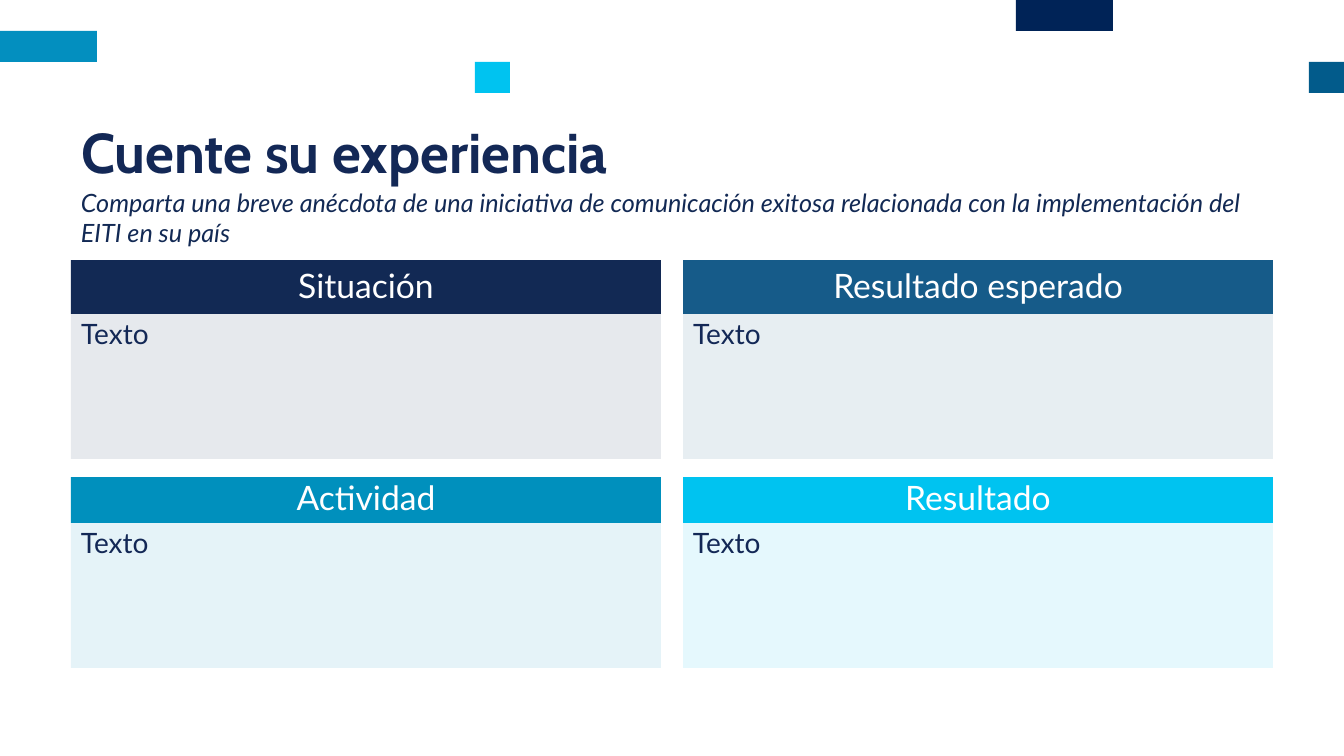
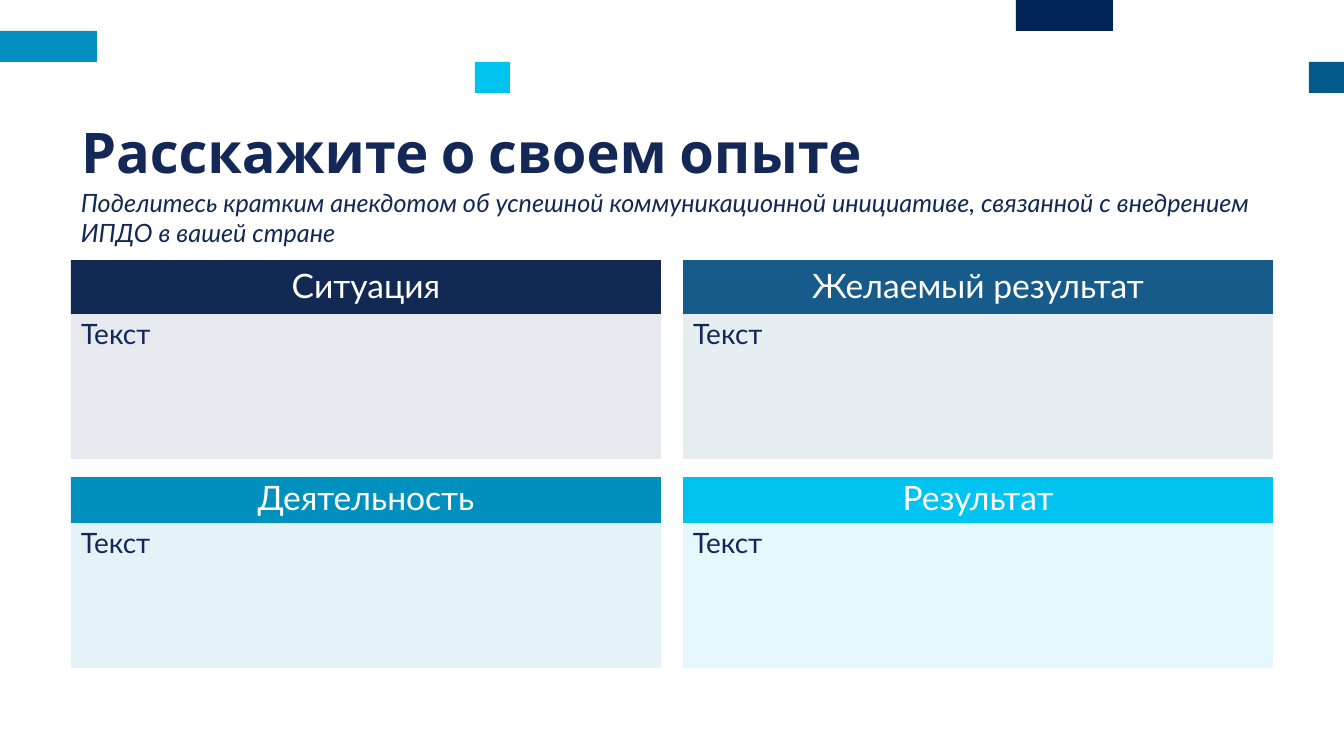
from lxml import etree
from pptx import Presentation, util as u
from pptx.dml.color import RGBColor
from pptx.enum import shapes, text
from pptx.oxml.ns import qn

COLORS = {
    "title": "132856", "note": "122954", "white": "FFFFFF",
    "band_navy": "002357", "band_blue": "025B8B", "band_teal": "038FBF", "band_cyan": "00C3F0",
    "situation": "122954", "expected": "165B89", "activity": "0090BD", "result": "00C3F0",
}
BANDS = [
    ("band_navy", 1016, 0, 97), ("band_blue", 1309, 62, 35),
    ("band_teal", 0, 31, 97), ("band_cyan", 475, 62, 35),
]
BAND_HEIGHT = 31
LEFT, WIDTH = 71, 1202
CARD_WIDTH, CARD_STEP, BODY_HEIGHT = 590, 612, 145
CARD_ROWS = [(260, 54, 0.94), (477, 46, 0.84)]
CARD_COLORS = ["situation", "expected", "activity", "result"]
EXPERIENCES = [
    ("Cuente su experiencia",
     "Comparta una breve anécdota de una iniciativa de comunicación exitosa "
     "relacionada con la implementación del EITI en su país",
     ["Situación", "Resultado esperado", "Actividad", "Resultado"], "Texto"),
    ("Расскажите о своем опыте",
     "Поделитесь кратким анекдотом об успешной коммуникационной инициативе, "
     "связанной с внедрением ИПДО в вашей стране",
     ["Ситуация", "Желаемый результат", "Деятельность", "Результат"], "Текст"),
]


def px(length):
    """Turn whole pixels into EMU."""
    return u.Emu(round(length * 12192000 / 1344))


class Deck:
    """Hold the presentation, its style and the current slide."""

    def __init__(self):
        """Set the slide size and choose the layout with two headed columns."""
        self.prs = Presentation()
        self.prs.slide_width, self.prs.slide_height = px(1344), px(756)
        self.layout = self.prs.slide_layouts.get_by_name("Comparison")
        self.slide = None
        self.free = []

    def new_slide(self):
        """Start a slide; the first one also gives the layout its bands."""
        self.slide = self.prs.slides.add_slide(self.layout)
        self.free = [p for p in self.slide.placeholders if p.placeholder_format.idx]
        if len(self.prs.slides) == 1:
            self.bands()

    def bands(self):
        """Place the coloured bands on the shared layout."""
        for number, (color, left, top, width) in enumerate(BANDS, 101):
            band = self.rectangle(left, top, width, BAND_HEIGHT, color)
            band._element.nvSpPr.cNvPr.set("id", str(number))
            self.layout.shapes._spTree.append(band._element)

    def place(self, shape, left, top, width, height):
        """Move and size a shape."""
        shape.left, shape.top, shape.width, shape.height = map(px, (left, top, width, height))

    def paint(self, shape, color, opacity=100):
        """Fill a shape without an outline."""
        shape.fill.solid()
        shape.fill.fore_color.rgb = RGBColor.from_string(COLORS[color])
        shape.line.fill.background()
        if opacity < 100:
            tint = shape._element.spPr.find(qn("a:solidFill"))[0]
            etree.SubElement(tint, qn("a:alpha"), val=str(opacity * 1000))

    def rectangle(self, left, top, width, height, color):
        """Add a plain filled rectangle."""
        box = self.slide.shapes.add_shape(
            shapes.MSO_SHAPE.RECTANGLE, *map(px, (left, top, width, height)))
        box.shadow.inherit = False
        self.paint(box, color)
        return box

    def set_text(self, shape, words, size, color, font="Lato", bold=False, italic=False,
                 centered=False, middle=False, spacing=1.0, before=0, after=0):
        """Set one styled paragraph in a shape."""
        frame = shape.text_frame
        frame.text = words
        frame.word_wrap = True
        frame.auto_size = text.MSO_AUTO_SIZE.NONE
        frame.vertical_anchor = text.MSO_ANCHOR.MIDDLE if middle else text.MSO_ANCHOR.TOP
        paragraph = frame.paragraphs[0]
        paragraph.alignment = text.PP_ALIGN.CENTER if centered else text.PP_ALIGN.LEFT
        paragraph.line_spacing = spacing
        paragraph.space_before, paragraph.space_after = u.Pt(before), u.Pt(after)
        properties = paragraph._p.get_or_add_pPr()
        properties.set("marL", "0")
        properties.set("indent", "0")
        etree.SubElement(properties, qn("a:buNone"))
        style = paragraph.runs[0].font
        style.name, style.size, style.bold, style.italic = font, u.Pt(size), bold, italic
        style.color.rgb = RGBColor.from_string(COLORS[color])

    def title(self, words):
        """Fill the title placeholder."""
        heading = self.slide.shapes.title
        self.place(heading, LEFT, 119, WIDTH, 74)
        self.set_text(heading, words, 40, "title", "Cabin", bold=True, middle=True, spacing=0.89)

    def instruction(self, words):
        """Add the italic line below the title."""
        note = self.slide.shapes.add_textbox(*map(px, (LEFT, 182, WIDTH, 72)))
        self.set_text(note, words, 18, "note", italic=True)

    def panel(self, left, top, height, color, opacity=100):
        """Give the next free placeholder, or else a rectangle, as a painted panel."""
        if self.free:
            panel = self.free.pop(0)
            self.place(panel, left, top, CARD_WIDTH, height)
        else:
            panel = self.rectangle(left, top, CARD_WIDTH, height, color)
        self.paint(panel, color, opacity)
        return panel

    def card(self, position, heading, body):
        """Add one headed card of the two by two grid."""
        row, column = divmod(position, 2)
        left, color = LEFT + column * CARD_STEP, CARD_COLORS[position]
        top, height, spacing = CARD_ROWS[row]
        self.set_text(self.panel(left, top, height, color), heading, 24, "white",
                      centered=True, middle=True, spacing=spacing, before=10, after=2)
        self.set_text(self.panel(left, top + height, BODY_HEIGHT, color, 10), body, 20, "title",
                      spacing=0.94, before=10, after=2)


def main():
    """Build one slide per language."""
    deck = Deck()
    for title, instruction, headings, body in EXPERIENCES:
        deck.new_slide()
        deck.title(title)
        for position, heading in enumerate(headings):
            deck.card(position, heading, body)
        deck.instruction(instruction)
    deck.prs.save("out.pptx")


if __name__ == "__main__":
    main()
